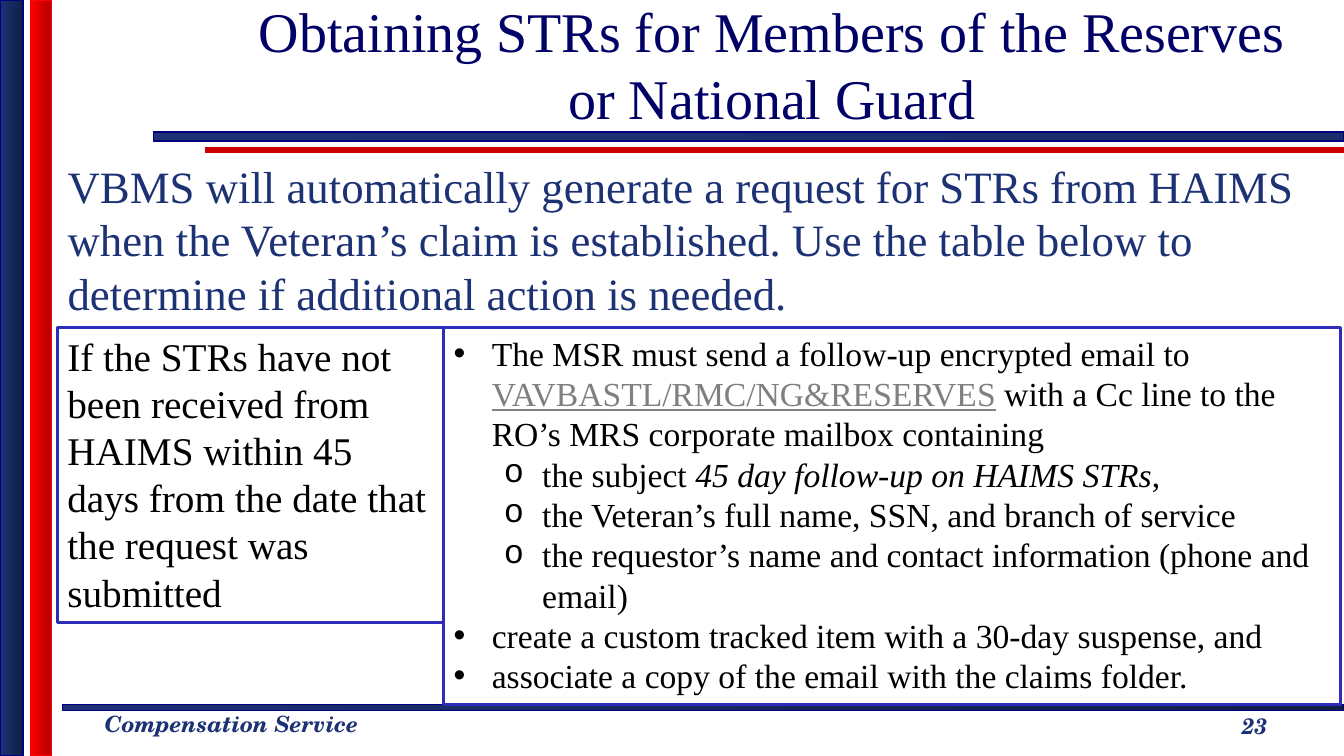
"""Build the slide on obtaining STRs for Reserve and National Guard members."""
from lxml.etree import SubElement
from pptx import Presentation
from pptx.dml.color import RGBColor
from pptx.enum.shapes import MSO_CONNECTOR as CONNECTOR, MSO_SHAPE as SHAPE
from pptx.enum.text import MSO_ANCHOR as ANCHOR, MSO_AUTO_SIZE as AUTO_SIZE, PP_ALIGN as ALIGN
from pptx.oxml.ns import qn
from pptx.util import Inches, Pt

NAVY = RGBColor(0x1D, 0x32, 0x75)
DARK_NAVY = RGBColor(0x11, 0x1E, 0x46)
MID_NAVY = RGBColor(0x1A, 0x2D, 0x69)
EDGE_NAVY = RGBColor(0x00, 0x00, 0x80)
TITLE_BLUE = RGBColor(0x00, 0x00, 0x66)
TABLE_BLUE = RGBColor(0x2D, 0x2D, 0xB9)
RED = RGBColor(0xFF, 0x00, 0x00)
DARK_RED = RGBColor(0xB2, 0x00, 0x00)
RULE_RED = RGBColor(0xCC, 0x00, 0x00)
GRAY = RGBColor(0x80, 0x80, 0x80)
BLACK = RGBColor(0x00, 0x00, 0x00)
SERIF = "Times New Roman"
SCHOOL = "TeX Gyre Schola"


def place(shape, left, top, width, height):
    shape.left, shape.top = Inches(left), Inches(top)
    shape.width, shape.height = Inches(width), Inches(height)


def style(para, size, color, name=SERIF, strong=False):
    for span in para.runs:
        font = span.font
        font.name, font.size, font.color.rgb = name, Pt(size), color
        if strong:
            font.bold = font.italic = True


deck = Presentation()
deck.slide_width, deck.slide_height = Inches(13.33), Inches(7.5)
page = deck.slides.add_slide(deck.slide_layouts[1])

rule = page.shapes.add_connector(CONNECTOR.STRAIGHT, Inches(2.03), Inches(1.49), Inches(13.33), Inches(1.49))
rule.line.color.rgb, rule.line.width = RULE_RED, Pt(4)
SubElement(rule._element.spPr, qn("a:effectLst"))

bars = [
    (0.62, 6.99, 12.71, 0.06, NAVY, DARK_NAVY, EDGE_NAVY),
    (1.52, 1.31, 11.81, 0.09, NAVY, MID_NAVY, EDGE_NAVY),
    (0, 0, 0.23, 7.5, NAVY, DARK_NAVY, EDGE_NAVY),
    (0.3, 0, 0.21, 7.5, RED, DARK_RED, RED),
]
for left, top, width, height, start, end, edge in bars:
    bar = page.shapes.add_shape(SHAPE.RECTANGLE, Inches(left), Inches(top), Inches(width), Inches(height))
    bar.shadow.inherit = False
    bar.fill.gradient()
    bar.fill.gradient_angle = 0
    for stop, color, position in zip(bar.fill.gradient_stops, (start, end), (0, 1)):
        stop.color.rgb, stop.position = color, position
    bar.line.color.rgb, bar.line.width = edge, Pt(1)

title = page.shapes.title
place(title, 2.34, 0, 10.63, 1.26)
title.text_frame.text = "Obtaining STRs for Members of the Reserves or National Guard"
title.text_frame.auto_size = AUTO_SIZE.NONE
title.text_frame.vertical_anchor = ANCHOR.MIDDLE
title.text_frame.paragraphs[0].alignment = ALIGN.CENTER
style(title.text_frame.paragraphs[0], 40, TITLE_BLUE)

intro = page.placeholders[1]
place(intro, 0.57, 1.52, 12.73, 1.73)
intro.text_frame.text = (
    "VBMS will automatically generate a request for STRs from HAIMS when the Veteran’s claim "
    "is established. Use the table below to determine if additional action is needed."
)
intro.text_frame.auto_size = AUTO_SIZE.NONE
para = intro.text_frame.paragraphs[0]
properties = para._p.get_or_add_pPr()
properties.set("marL", "0")
properties.set("indent", "0")
SubElement(properties, qn("a:buNone"))
para.space_before = Pt(0)
style(para, 32, NAVY)

footers = [
    ("Compensation Service", 0.94, 7, 2.82, 0.37, ALIGN.LEFT, ANCHOR.TOP),
    ("23", 11.56, 6.95, 1.77, 0.5, ALIGN.CENTER, ANCHOR.MIDDLE),
]
for text, left, top, width, height, align, anchor in footers:
    box = page.shapes.add_textbox(Inches(left), Inches(top), Inches(width), Inches(height))
    box.text_frame.text = text
    box.text_frame.word_wrap = True
    box.text_frame.vertical_anchor = anchor
    box.text_frame.paragraphs[0].alignment = align
    style(box.text_frame.paragraphs[0], 16, NAVY, SCHOOL, True)

condition = [(None, ["If the STRs have not been received from HAIMS within 45 days "
                     "from the date that the request was submitted"])]
mailbox = "VAVBASTL/RMC/NG&RESERVES"
subject = "45 day follow-up on HAIMS STRs"
actions = [
    (0, ["The MSR must send a follow-up encrypted email to ", mailbox,
         " with a Cc line to the RO’s MRS corporate mailbox containing"]),
    (1, ["the subject ", subject, ","]),
    (1, ["the Veteran’s full name, SSN, and branch of service"]),
    (1, ["the requestor’s name and contact information (phone and email)"]),
    (0, ["create a custom tracked item with a 30-day suspense, and"]),
    (0, ["associate a copy of the email with the claims folder."]),
]
bullets = [("•", "Arial", 0.38), ("o", "Courier New", 0.88)]
cells = [(0.57, 3.83, 2.93, 28, condition), (4.4, 8.9, 3.74, 24, actions)]
for left, width, height, size, items in cells:
    cell = page.shapes.add_shape(SHAPE.RECTANGLE, Inches(left), Inches(3.25), Inches(width), Inches(height))
    cell.shadow.inherit = False
    cell.fill.background()
    cell.line.color.rgb, cell.line.width = TABLE_BLUE, Pt(2.25)
    frame = cell.text_frame
    frame.word_wrap = True
    frame.vertical_anchor = ANCHOR.TOP
    for index, (level, texts) in enumerate(items):
        para = frame.add_paragraph() if index else frame.paragraphs[0]
        para.alignment = ALIGN.LEFT
        if level is not None:
            mark, mark_font, margin = bullets[level]
            para.level = level
            properties = para._p.get_or_add_pPr()
            properties.set("marL", str(Inches(margin)))
            properties.set("indent", str(Inches(-0.38)))
            SubElement(properties, qn("a:buFont"), typeface=mark_font)
            SubElement(properties, qn("a:buChar"), char=mark)
        for text in texts:
            para.add_run().text = text
        style(para, size, BLACK)
        for span in para.runs:
            if span.text == mailbox:
                span.font.color.rgb, span.font.underline = GRAY, True
            elif span.text == subject:
                span.font.italic = True

deck.save("out.pptx")
